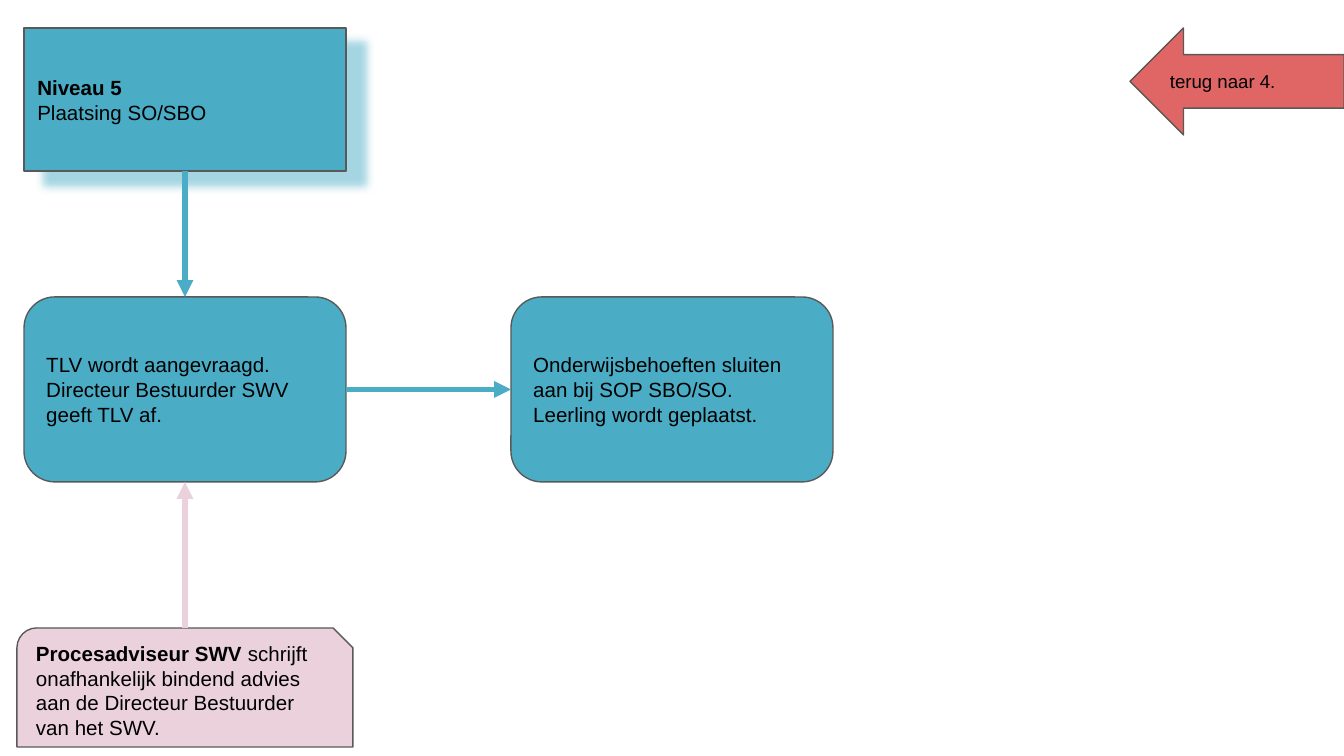
from dataclasses import dataclass

from lxml import etree
from pptx import Presentation
from pptx.dml.color import RGBColor
from pptx.enum.shapes import MSO_CONNECTOR, MSO_SHAPE
from pptx.enum.text import MSO_ANCHOR, PP_ALIGN
from pptx.oxml import parse_xml
from pptx.oxml.ns import nsdecls, qn
from pptx.util import Emu, Inches, Pt

RECT = MSO_SHAPE.RECTANGLE
ROUNDED = MSO_SHAPE.ROUNDED_RECTANGLE
SNIP_ROUND = MSO_SHAPE.SNIP_ROUND_SINGLE_CORNER if hasattr(
    MSO_SHAPE, "SNIP_ROUND_SINGLE_CORNER") else MSO_SHAPE.SNIP_ROUND_RECTANGLE
LEFT_ARROW = MSO_SHAPE.LEFT_ARROW
STRAIGHT = MSO_CONNECTOR.STRAIGHT
MIDDLE = MSO_ANCHOR.MIDDLE
LEFT = PP_ALIGN.LEFT
TOP_SIDE, LEFT_SIDE, BOTTOM_SIDE, RIGHT_SIDE = range(4)

SCALE = 914400 / 134.4


@dataclass(frozen=True)
class Theme:
    font: str = "Arial"
    body: int = 11
    small: int = 10
    text: str = "000000"
    outline: str = "595959"
    step: str = "4AACC5"
    advice: str = "EAD1DC"
    back: str = "E06666"
    outline_width: float = 0.75
    arrow_width: float = 3


THEME = Theme()


def px(n):
    return Emu(round(n * SCALE))


def rgb(value):
    return RGBColor.from_string(value)


def add_box(slide, kind, box, fill, paragraphs, size=THEME.body):
    """Add a filled shape; each paragraph is a list of (text, bold) runs."""
    s = slide.shapes.add_shape(kind, *map(px, box))
    s.shadow.inherit = False
    s.fill.solid()
    s.fill.fore_color.rgb = rgb(fill)
    s.line.color.rgb = rgb(THEME.outline)
    s.line.width = Pt(THEME.outline_width)
    tf = s.text_frame
    tf.word_wrap = True
    tf.vertical_anchor = MIDDLE
    tf.margin_left = tf.margin_right = Inches(0.1)
    tf.margin_top = tf.margin_bottom = Inches(0.1)
    for i, runs in enumerate(paragraphs):
        p = tf.paragraphs[0] if i == 0 else tf.add_paragraph()
        p.alignment = LEFT
        p.font.name = THEME.font
        p.font.size = Pt(size)
        p.font.color.rgb = rgb(THEME.text)
        for text, bold in runs:
            r = p.add_run()
            r.text = text
            r.font.bold = bold
    return s


def add_offset_shadow(s, color):
    """Cast a soft, half transparent shadow to the lower right."""
    effects = s._element.spPr.find(qn("a:effectLst"))
    effects.append(parse_xml(
        f'<a:outerShdw {nsdecls("a")} blurRad="{Pt(4.5)}" dist="{Pt(12.8)}" '
        f'dir="{36 * 60000}" algn="bl" rotWithShape="0">'
        f'<a:srgbClr val="{color}"><a:alpha val="50000"/></a:srgbClr>'
        '</a:outerShdw>'))


def add_arrow(slide, start, end, color):
    c = slide.shapes.add_connector(STRAIGHT, *map(px, start + end))
    c.line.color.rgb = rgb(color)
    c.line.width = Pt(THEME.arrow_width)
    etree.SubElement(c.line._get_or_add_ln(), qn("a:tailEnd"), type="triangle")
    etree.SubElement(c._element.spPr, qn("a:effectLst"))
    return c


def main():
    prs = Presentation()
    prs.slide_width, prs.slide_height = px(1344), px(756)
    slide = prs.slides.add_slide(prs.slide_layouts[6])

    level = add_box(slide, RECT, (24, 28, 322, 143), THEME.step,
                    [[("Niveau 5", True)], [("Plaatsing SO/SBO", False)]])
    add_offset_shadow(level, THEME.step)
    request = add_box(
        slide, ROUNDED, (24, 297, 322, 185), THEME.step,
        [[("TLV wordt aangevraagd. Directeur Bestuurder SWV geeft TLV af.", False)]])
    placement = add_box(
        slide, ROUNDED, (511, 297, 322, 185), THEME.step,
        [[("Onderwijsbehoeften sluiten aan bij SOP SBO/SO. "
           "Leerling wordt geplaatst.", False)]])

    to_placement = add_arrow(slide, (346, 390), (511, 390), THEME.step)
    to_placement.begin_connect(request, RIGHT_SIDE)
    to_placement.end_connect(placement, LEFT_SIDE)
    to_request = add_arrow(slide, (185, 171), (185, 297), THEME.step)
    to_request.begin_connect(level, BOTTOM_SIDE)
    to_request.end_connect(request, TOP_SIDE)

    add_box(slide, SNIP_ROUND, (17, 628, 336, 119), THEME.advice,
            [[("Procesadviseur SWV ", True),
              ("schrijft onafhankelijk bindend advies aan de "
               "Directeur Bestuurder van het SWV.", False)]])
    from_advice = add_arrow(slide, (185, 628), (185, 482), THEME.advice)
    from_advice.end_connect(request, BOTTOM_SIDE)

    add_box(slide, LEFT_ARROW, (1130, 28, 214, 107), THEME.back,
            [[("terug naar 4.", False)]], THEME.small)

    prs.save("out.pptx")


if __name__ == "__main__":
    main()
